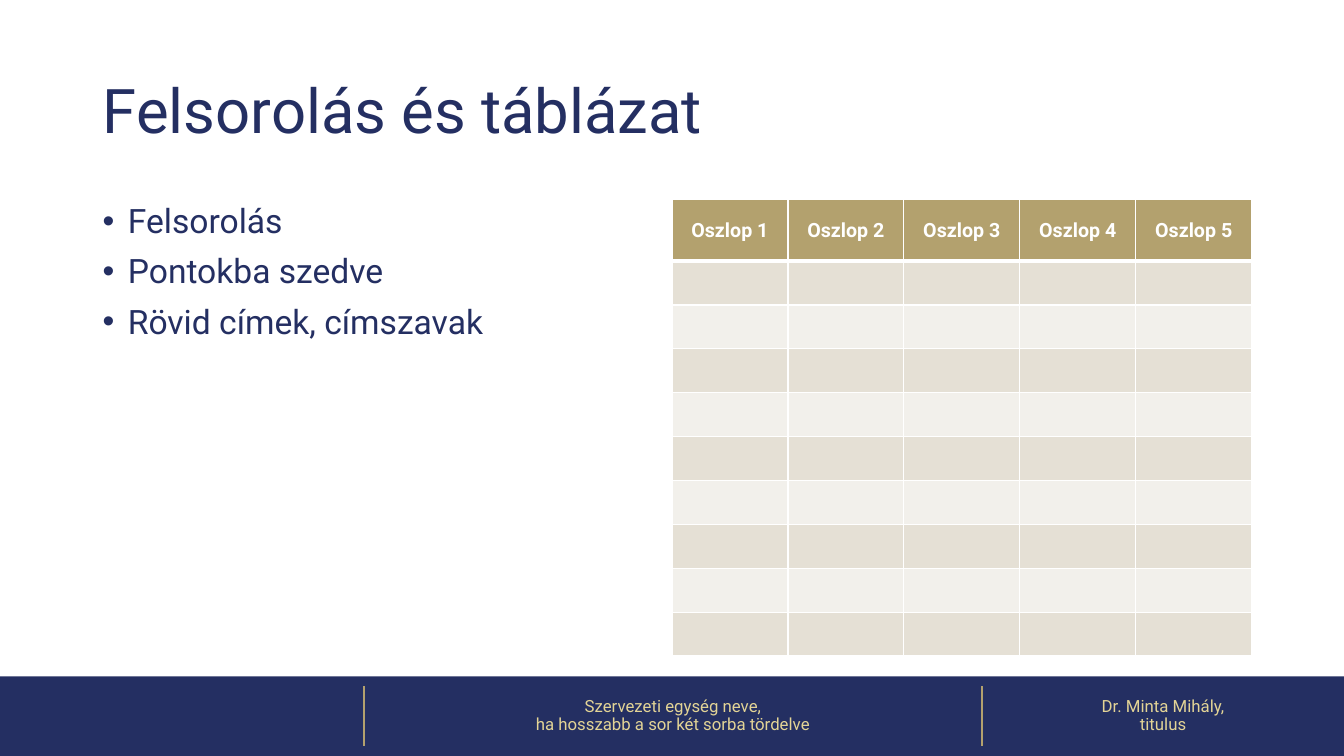
from dataclasses import dataclass

from lxml import etree
from pptx import Presentation
from pptx.dml.color import RGBColor
from pptx.enum.shapes import MSO_CONNECTOR, MSO_SHAPE
from pptx.enum.text import MSO_ANCHOR, PP_ALIGN
from pptx.oxml.ns import qn
from pptx.util import Inches, Pt

LEFT, CENTER = PP_ALIGN.LEFT, PP_ALIGN.CENTER
TOP, MIDDLE = MSO_ANCHOR.TOP, MSO_ANCHOR.MIDDLE
RECTANGLE, STRAIGHT = MSO_SHAPE.RECTANGLE, MSO_CONNECTOR.STRAIGHT


@dataclass(frozen=True)
class Theme:
    font: str = "Roboto"
    navy: RGBColor = RGBColor(0x24, 0x2F, 0x62)
    gold: RGBColor = RGBColor(0xB3, 0xA1, 0x6E)
    pale_gold: RGBColor = RGBColor(0xE3, 0xD4, 0x96)
    white: RGBColor = RGBColor(0xFF, 0xFF, 0xFF)
    bands: tuple = (RGBColor(0xE5, 0xE0, 0xD5), RGBColor(0xF2, 0xF0, 0xEB))
    title_size: int = 44
    body_size: int = 24
    header_size: int = 14
    footer_size: int = 12


THEME = Theme()

# Page grid, in inches
PAGE_WIDTH, PAGE_HEIGHT = 13.33, 7.5
MARGIN = 0.92
CONTENT_TOP, CONTENT_HEIGHT = 1.98, 4.53
FOOTER_TOP, FOOTER_HEIGHT = 6.71, 0.79
DIVIDERS = (3.61, 9.74)
DIVIDER_INSET = 0.1
TABLE_LEFT = PAGE_WIDTH / 2
COLUMNS, COLUMN_WIDTH = 5, 1.15
BODY_ROWS, HEADER_HEIGHT = 9, 0.61
ROW_HEIGHT = (CONTENT_HEIGHT - HEADER_HEIGHT) / BODY_ROWS


def write(para, text, size, color, align, spacing=0.9):
    para.text = text
    para.alignment = align
    para.line_spacing = spacing
    para.font.name = THEME.font
    para.font.size = Pt(size)
    para.font.color.rgb = color


def add_box(page, left, top, width, height, anchor):
    box = page.shapes.add_textbox(*map(Inches, (left, top, width, height)))
    box.text_frame.word_wrap = True
    box.text_frame.vertical_anchor = anchor
    return box.text_frame


deck = Presentation()
deck.slide_width, deck.slide_height = Inches(PAGE_WIDTH), Inches(PAGE_HEIGHT)
page = deck.slides.add_slide(deck.slide_layouts[5])

# Footer band with its dividers
band = page.shapes.add_shape(RECTANGLE, 0, Inches(FOOTER_TOP), deck.slide_width, Inches(FOOTER_HEIGHT))
band.shadow.inherit = False
band.fill.solid()
band.fill.fore_color.rgb = THEME.navy
band.line.fill.background()

for x in DIVIDERS:
    divider = page.shapes.add_connector(
        STRAIGHT, Inches(x), Inches(FOOTER_TOP + DIVIDER_INSET),
        Inches(x), Inches(FOOTER_TOP + FOOTER_HEIGHT - DIVIDER_INSET))
    divider.line.color.rgb = THEME.gold
    divider.line.width = Pt(1.5)
    etree.SubElement(divider._element.spPr, qn("a:effectLst"))

# Footer texts, each filling the space right of a divider
footer_texts = ("Szervezeti egység neve,\nha hosszabb a sor két sorba tördelve",
                "Dr. Minta Mihály,\ntitulus")
for left, right, text in zip(DIVIDERS, DIVIDERS[1:] + (PAGE_WIDTH,), footer_texts):
    frame = add_box(page, left, FOOTER_TOP, right - left, FOOTER_HEIGHT, MIDDLE)
    write(frame.paragraphs[0], text, THEME.footer_size, THEME.pale_gold, CENTER)

# Title
title = page.shapes.title
title.left, title.top = Inches(MARGIN), Inches(0.4)
title.width, title.height = Inches(PAGE_WIDTH - 2 * MARGIN), Inches(1.45)
title.text_frame.vertical_anchor = MIDDLE
write(title.text_frame.paragraphs[0], "Felsorolás és táblázat", THEME.title_size, THEME.navy, LEFT)

# Bullet list
frame = add_box(page, MARGIN, CONTENT_TOP, 5.67, CONTENT_HEIGHT, TOP)
for index, text in enumerate(("Felsorolás", "Pontokba szedve", "Rövid címek, címszavak")):
    para = frame.add_paragraph() if index else frame.paragraphs[0]
    properties = para._p.get_or_add_pPr()
    properties.set("marL", str(Inches(0.25)))
    properties.set("indent", str(-Inches(0.25)))
    etree.SubElement(properties, qn("a:buFont"), typeface="Arial")
    etree.SubElement(properties, qn("a:buChar"), char="•")
    write(para, text, THEME.body_size, THEME.navy, LEFT)
    if index:
        para.space_before = Pt(10)

# Table
table = page.shapes.add_table(
    BODY_ROWS + 1, COLUMNS, Inches(TABLE_LEFT), Inches(CONTENT_TOP),
    Inches(COLUMNS * COLUMN_WIDTH), Inches(CONTENT_HEIGHT)).table
for column in table.columns:
    column.width = Inches(COLUMN_WIDTH)

for row_index, row in enumerate(table.rows):
    is_header = row_index == 0
    row.height = Inches(HEADER_HEIGHT if is_header else ROW_HEIGHT)
    for column_index, cell in enumerate(row.cells):
        # White borders, heavier between header and body
        properties = cell._tc.get_or_add_tcPr()
        for side in ("lnL", "lnR", "lnT", "lnB"):
            heavy = (row_index, side) in ((0, "lnB"), (1, "lnT"))
            border = etree.SubElement(properties, qn(f"a:{side}"), w=str(Pt(3 if heavy else 1)))
            paint = etree.SubElement(border, qn("a:solidFill"))
            etree.SubElement(paint, qn("a:srgbClr"), val=str(THEME.white))
        cell.fill.solid()
        cell.fill.fore_color.rgb = THEME.gold if is_header else THEME.bands[(row_index - 1) % 2]
        if is_header:
            cell.vertical_anchor = MIDDLE
            para = cell.text_frame.paragraphs[0]
            write(para, f"Oszlop {column_index + 1}", THEME.header_size, THEME.white, CENTER, 1.0)
            para.font.bold = True

deck.save("out.pptx")
